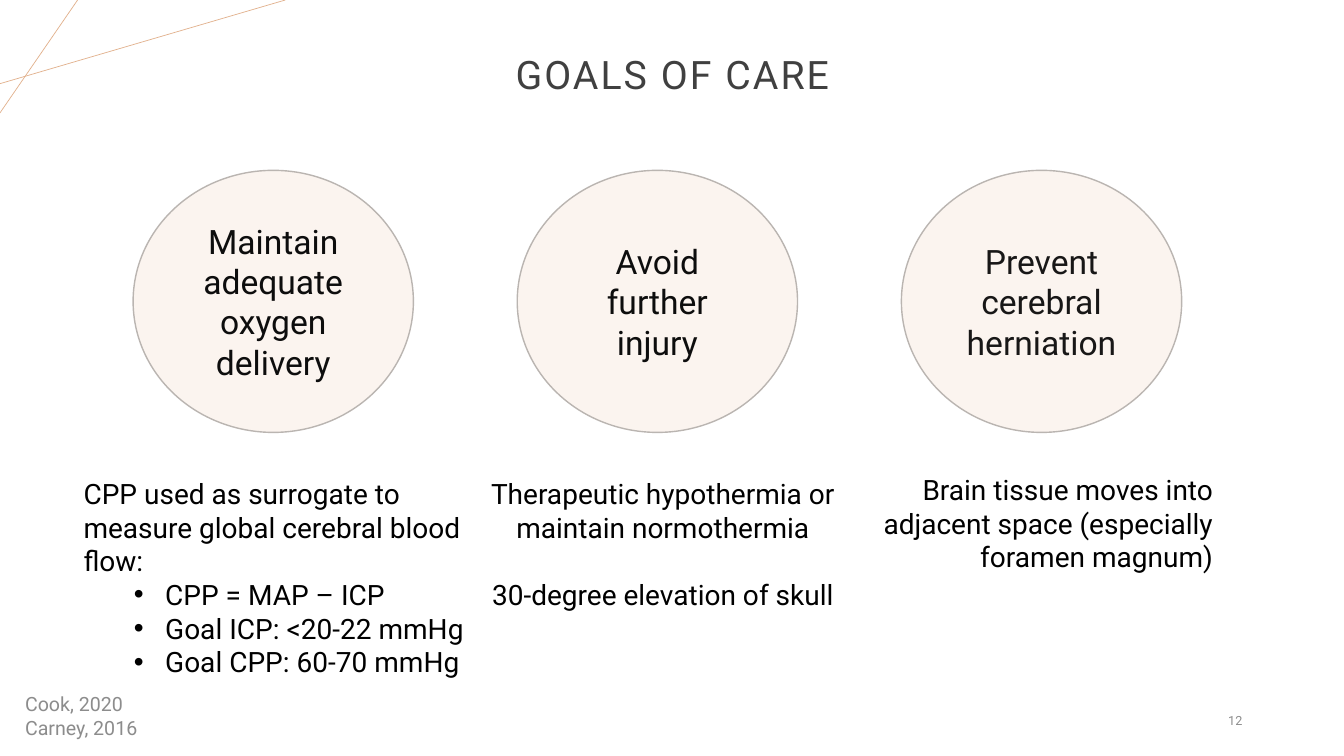
import pptx
import pptx.util
import pptx.dml.color
import pptx.enum.shapes
import pptx.enum.text
import pptx.oxml
import pptx.oxml.ns
import lxml.etree

Inches = pptx.util.Inches
Pt = pptx.util.Pt
Align = pptx.enum.text.PP_ALIGN
Anchor = pptx.enum.text.MSO_ANCHOR
qn = pptx.oxml.ns.qn


def rgb(hex_color):
    return pptx.dml.color.RGBColor.from_string(hex_color)


def write(frame, text, size=20, color="000000", align=Align.LEFT, anchor=Anchor.TOP,
          indent=0, hanging=0, bullet=None, before=0, spacing=None, tracking=None):
    frame.word_wrap = True
    frame.vertical_anchor = anchor
    paragraph = frame.add_paragraph() if frame.text else frame.paragraphs[0]
    paragraph.alignment = align
    paragraph.space_before = Pt(before)
    if spacing:
        paragraph.line_spacing = spacing
    properties = paragraph._p.get_or_add_pPr()
    properties.set("marL", str(Inches(indent)))
    properties.set("indent", str(Inches(-hanging)))
    if bullet:
        lxml.etree.SubElement(properties, qn("a:buFont")).set("typeface", "Arial")
        lxml.etree.SubElement(properties, qn("a:buChar")).set("char", bullet)
    run = paragraph.add_run()
    run.text = text
    run.font.name = "Roboto"
    run.font.size = Pt(size)
    run.font.color.rgb = rgb(color)
    if tracking:
        run._r.get_or_add_rPr().set("spc", str(int(tracking * 100)))


deck = pptx.Presentation()
deck.slide_width = Inches(13.33)
deck.slide_height = Inches(7.5)
slide = deck.slides.add_slide(deck.slide_layouts[6])
shapes = slide.shapes

for x1, y1, x2, y2 in [(0, 0.83, 2.83, 0), (0.77, 0, 0, 1.12)]:
    corner_line = shapes.add_connector(
        pptx.enum.shapes.MSO_CONNECTOR.STRAIGHT,
        Inches(x1), Inches(y1), Inches(x2), Inches(y2))
    corner_line.line.color.rgb = rgb("E2B18D")
    corner_line.line.width = Pt(0.5)
    lxml.etree.SubElement(corner_line._element.spPr, qn("a:effectLst"))

title = shapes.add_textbox(Inches(0.92), Inches(0.4), Inches(11.5), Inches(0.72))
write(title.text_frame, "GOALS OF CARE", size=28, color="404040", align=Align.CENTER,
      anchor=Anchor.MIDDLE, spacing=0.9, tracking=1.5)

goals = [
    ("Maintain adequate oxygen delivery", "0D0D0D"),
    ("Avoid further injury", "0D0D0D"),
    ("Prevent cerebral herniation", "181717"),
]
for column, (goal, color) in enumerate(goals):
    circle = shapes.add_shape(
        pptx.enum.shapes.MSO_SHAPE.OVAL,
        Inches(1.32 + 3.81 * column), Inches(1.69), Inches(2.78), Inches(2.6))
    circle.shadow.inherit = False
    circle.fill.solid()
    circle.fill.fore_color.rgb = rgb("FBF4EF")
    circle.line.color.rgb = rgb("BAB5B1")
    circle.line.width = Pt(1)
    write(circle.text_frame, goal, size=24, color=color, align=Align.CENTER,
          anchor=Anchor.MIDDLE)

perfusion = shapes.add_textbox(Inches(0.23), Inches(4.68), Inches(4.52), Inches(2.42))
write(perfusion.text_frame, "CPP used as surrogate to measure global cerebral blood flow:",
      indent=0.5)
for target in ["CPP = MAP – ICP", "Goal ICP: <20-22 mmHg", "Goal CPP: 60-70 mmHg"]:
    write(perfusion.text_frame, target, indent=1.31, hanging=0.31, bullet="•")

protection = shapes.add_textbox(Inches(4.74), Inches(4.68), Inches(3.67), Inches(1.45))
write(protection.text_frame, "Therapeutic hypothermia or maintain normothermia",
      align=Align.CENTER)
write(protection.text_frame, "30-degree elevation of skull", align=Align.CENTER, before=24)

herniation = shapes.add_textbox(Inches(8.14), Inches(4.64), Inches(3.99), Inches(1.75))
write(herniation.text_frame,
      "Brain tissue moves into adjacent space (especially foramen magnum)",
      align=Align.RIGHT, indent=0.5)

page_number = shapes.add_textbox(Inches(9.42), Inches(6.95), Inches(3), Inches(0.4))
write(page_number.text_frame, "12", size=9, color="8C8C8C", align=Align.RIGHT,
      anchor=Anchor.MIDDLE)

citations = shapes.add_textbox(Inches(0.15), Inches(6.75), Inches(1.44), Inches(0.7))
for citation in ["Cook, 2020", "Carney, 2016"]:
    write(citations.text_frame, citation, size=14, color="8C8C8C", anchor=Anchor.MIDDLE)

deck.save("out.pptx")
